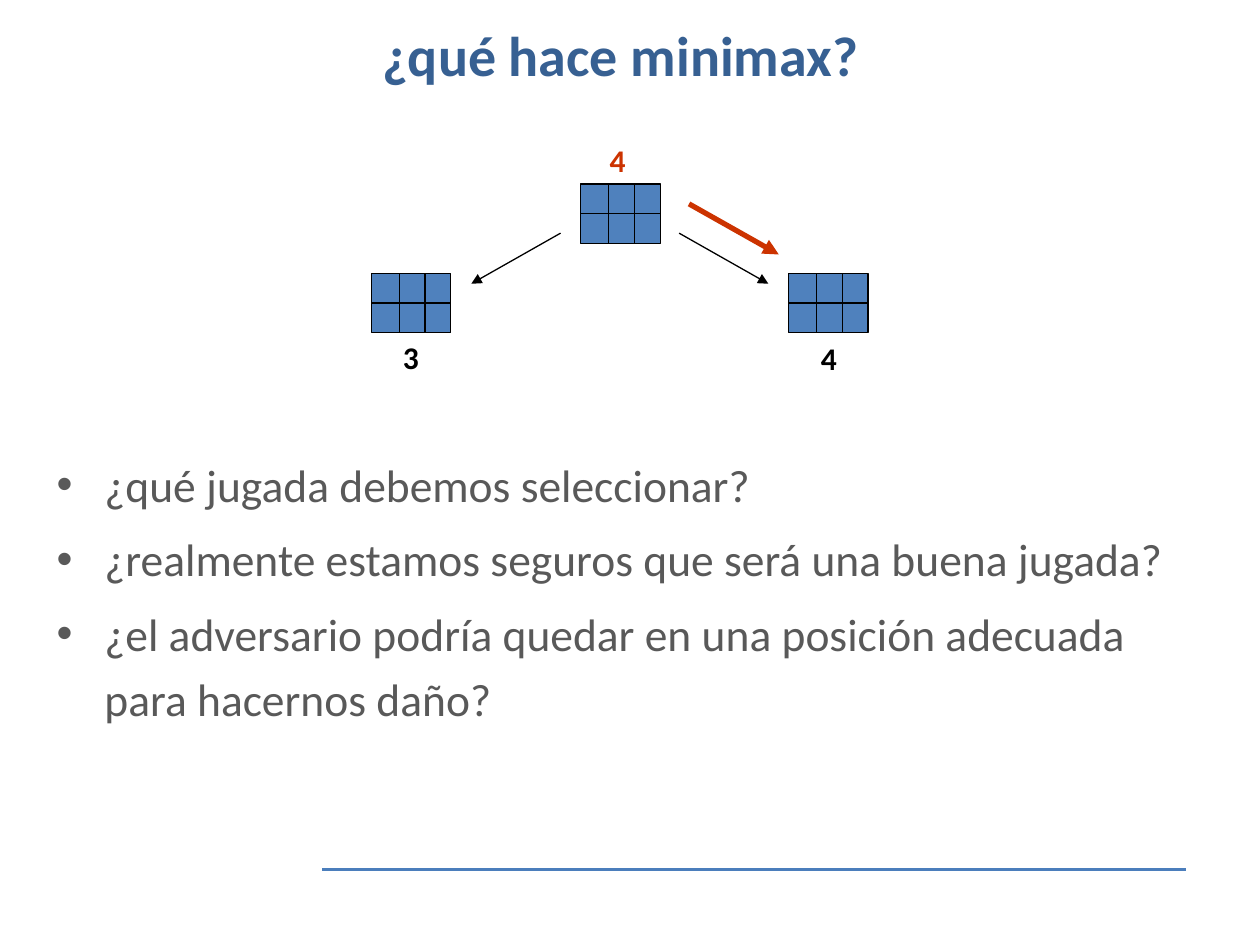
from dataclasses import dataclass

from lxml.etree import SubElement
from pptx import Presentation
from pptx.dml.color import RGBColor
from pptx.enum.shapes import MSO_CONNECTOR as Connector, MSO_SHAPE as Shape
from pptx.enum.text import MSO_ANCHOR as Anchor, MSO_AUTO_SIZE as AutoSize, PP_ALIGN as Align
from pptx.oxml.ns import qn
from pptx.util import Cm, Pt


@dataclass(frozen=True)
class Theme:
    font: str = "Calibri"
    title: RGBColor = RGBColor(0x37, 0x60, 0x92)
    body: RGBColor = RGBColor(0x59, 0x59, 0x59)
    rule: RGBColor = RGBColor(0x4B, 0x7E, 0xBC)
    board: RGBColor = RGBColor(0x4F, 0x81, 0xBD)
    ink: RGBColor = RGBColor(0, 0, 0)
    accent: RGBColor = RGBColor(0xCC, 0x33, 0x00)
    title_size: Pt = Pt(32)
    body_size: Pt = Pt(26)
    label_size: Pt = Pt(18)
    thin: Pt = Pt(0.75)
    medium: Pt = Pt(1.5)
    thick: Pt = Pt(3)


theme = Theme()


def add_line(shapes, start, end, color, width, arrow=False):
    ends = [Cm(value) for value in (*start, *end)]
    line = shapes.add_connector(Connector.STRAIGHT, *ends)
    line.line.color.rgb = color
    line.line.width = width
    if arrow:
        SubElement(line.line._get_or_add_ln(), qn("a:tailEnd"), type="triangle")
    SubElement(line._element.spPr, qn("a:effectLst"))


def set_font(paragraph, size, color, bold=False):
    font = paragraph.font
    font.name = theme.font
    font.size = size
    font.bold = bold
    font.color.rgb = color


presentation = Presentation()
presentation.slide_width = Cm(25.4)
presentation.slide_height = Cm(19.05)
slide = presentation.slides.add_slide(presentation.slide_layouts[1])
add_line(slide.shapes, (6.5, 17.53), (23.9, 17.53), theme.rule, theme.medium)

title = slide.shapes.title
title.left, title.top, title.width, title.height = Cm(0.71), Cm(-0.08), Cm(23.6), Cm(2.34)
title.text_frame.text = "¿qué hace minimax?"
title.text_frame.vertical_anchor = Anchor.MIDDLE
title_paragraph = title.text_frame.paragraphs[0]
title_paragraph.alignment = Align.CENTER
set_font(title_paragraph, theme.title_size, theme.title, bold=True)

questions = [
    "¿qué jugada debemos seleccionar?",
    "¿realmente estamos seguros que será una buena jugada?",
    "¿el adversario podría quedar en una posición adecuada\vpara hacernos daño?",
]
body = slide.placeholders[1]
body.left, body.top, body.width, body.height = Cm(0.89), Cm(8.86), Cm(23.8), Cm(7.44)
frame = body.text_frame
frame.auto_size = AutoSize.NONE
frame.vertical_anchor = Anchor.TOP
for index, question in enumerate(questions):
    paragraph = frame.add_paragraph() if index else frame.paragraphs[0]
    paragraph.text = question
    properties = paragraph._p.get_or_add_pPr()
    properties.set("marL", str(Cm(0.96)))
    properties.set("indent", str(Cm(-0.96)))
    SubElement(properties, qn("a:buFont"), typeface="Arial")
    SubElement(properties, qn("a:buChar"), char="•")
    paragraph.line_spacing = 1.2
    paragraph.space_before = Pt(5.2 if index else 0)
    set_font(paragraph, theme.body_size, theme.body)

board_width, board_height = 1.6, 1.2
boards = [(7.49, 5.51), (11.71, 3.71), (15.9, 5.51)]
for left, top in boards:
    group = slide.shapes.add_group_shape()
    board = group.shapes.add_shape(
        Shape.RECTANGLE, Cm(left), Cm(top), Cm(board_width), Cm(board_height)
    )
    board.shadow.inherit = False
    board.fill.solid()
    board.fill.fore_color.rgb = theme.board
    board.line.color.rgb = theme.ink
    board.line.width = theme.thin
    for offset in (0.56, 1.08):
        x = left + offset
        add_line(group.shapes, (x, top), (x, top + board_height), theme.ink, theme.thin)
    middle = top + board_height / 2
    add_line(group.shapes, (left, middle), (left + board_width, middle), theme.ink, theme.thin)

arrows = [
    ((11.3, 4.7), (9.5, 5.72), theme.ink, theme.thin),
    ((13.69, 4.7), (15.49, 5.72), theme.ink, theme.thin),
    ((13.89, 4.11), (15.7, 5.13), theme.accent, theme.thick),
]
for start, end, color, width in arrows:
    add_line(slide.shapes, start, end, color, width, arrow=True)

labels = [
    ("3", 7.87, 6.68, theme.ink),
    ("4", 16.3, 6.7, theme.ink),
    ("4", 12.04, 2.72, theme.accent),
]
for text, left, top, color in labels:
    label = slide.shapes.add_textbox(Cm(left), Cm(top), Cm(0.85), Cm(1.02))
    label.text_frame.word_wrap = False
    label.text_frame.auto_size = AutoSize.SHAPE_TO_FIT_TEXT
    label.text_frame.text = text
    set_font(label.text_frame.paragraphs[0], theme.label_size, color, bold=True)

presentation.save("out.pptx")
